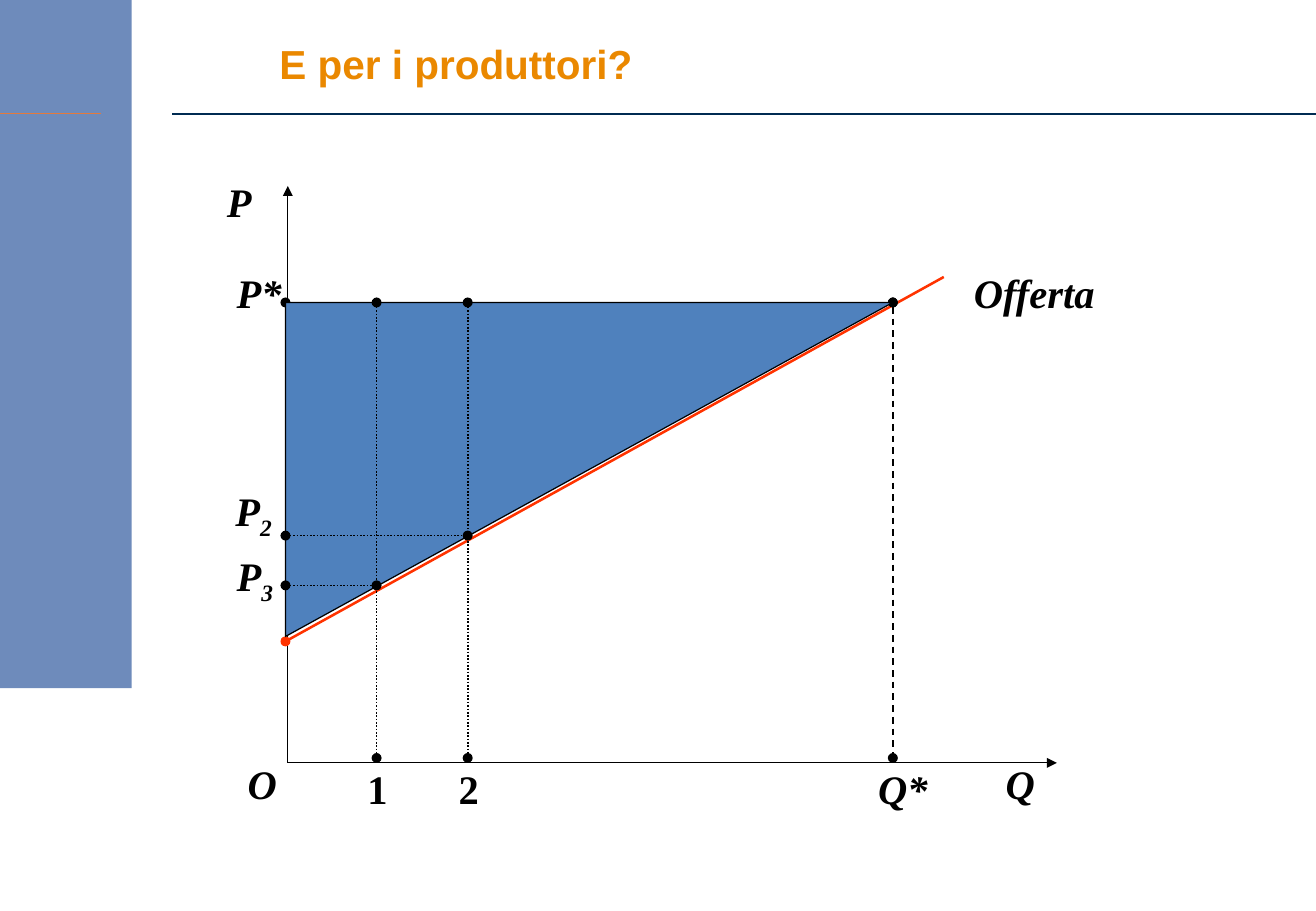
from dataclasses import dataclass

from lxml.etree import SubElement
from pptx import Presentation
from pptx.dml.color import RGBColor
from pptx.enum.dml import MSO_LINE as Dash
from pptx.enum.shapes import MSO_CONNECTOR as Connector, MSO_SHAPE as Shape
from pptx.enum.text import MSO_ANCHOR as Anchor, PP_ALIGN as Align
from pptx.oxml.ns import qn
from pptx.util import Pt


@dataclass(frozen=True)
class Theme:
    band: RGBColor = RGBColor.from_string("6E8BBB")
    accent: RGBColor = RGBColor.from_string("E37A3C")
    rule: RGBColor = RGBColor.from_string("002B52")
    title: RGBColor = RGBColor.from_string("EA8800")
    ink: RGBColor = RGBColor.from_string("000000")
    supply: RGBColor = RGBColor.from_string("FF3300")
    surplus: RGBColor = RGBColor.from_string("4F81BD")
    title_font: str = "Arial"
    label_font: str = "Times New Roman"
    text_size: Pt = Pt(24)
    thin: Pt = Pt(0.75)
    medium: Pt = Pt(1)
    thick: Pt = Pt(1.5)


THEME = Theme()

# Diagram coordinates in points
AXIS_X, AXIS_Y = 170.6, 452.2
PRICE_X, QUANTITY_Y = 169.2, 449.3
EQUILIBRIUM_X, EQUILIBRIUM_Y = 529.2, 179.3
SURPLUS_BOTTOM = 377.3
UNIT = 54


def add_line(slide, start, end, color=THEME.ink, width=THEME.medium,
             dash=None, head=None, tail=None):
    line = slide.shapes.add_connector(
        Connector.STRAIGHT, *(Pt(value) for value in (*start, *end)))
    line.line.color.rgb = color
    line.line.width = width
    if dash:
        line.line.dash_style = dash
    outline = line.line._get_or_add_ln()
    for tag, kind in (("a:headEnd", head), ("a:tailEnd", tail)):
        if kind:
            SubElement(outline, qn(tag), type=kind)
    SubElement(line._element.spPr, qn("a:effectLst"))


def add_label(slide, text, left, top, subscript="", italic=True, width=46):
    frame = slide.shapes.add_textbox(
        Pt(left), Pt(top), Pt(width), Pt(36)).text_frame
    frame.word_wrap = True
    paragraph = frame.paragraphs[0]
    paragraph.add_run().text = text
    if subscript:
        lowered = paragraph.add_run()
        lowered.text = subscript
        lowered._r.get_or_add_rPr().set("baseline", "-25000")
    font = paragraph.font
    font.name, font.size = THEME.label_font, THEME.text_size
    font.bold, font.italic = True, italic
    font.color.rgb = THEME.ink


def add_title(slide, text):
    title = slide.shapes.title
    title.left, title.top = Pt(158.4), Pt(12.2)
    title.width, title.height = Pt(443.5), Pt(50.4)
    title.text_frame.text = text
    title.text_frame.vertical_anchor = Anchor.MIDDLE
    paragraph = title.text_frame.paragraphs[0]
    paragraph.alignment = Align.LEFT
    font = paragraph.font
    font.name, font.size, font.bold = THEME.title_font, THEME.text_size, True
    font.color.rgb = THEME.title


def add_frame(slide):
    """Draw the side band and the rules under the title."""
    band = slide.shapes.add_shape(Shape.RECTANGLE, 0, 0, Pt(78), Pt(408))
    band.shadow.inherit = False
    band.fill.solid()
    band.fill.fore_color.rgb = THEME.band
    band.line.fill.background()
    add_line(slide, (0, 67.3), (60, 67.3), THEME.accent)
    add_line(slide, (102, 67.5), (780, 67.5), THEME.rule)


def add_axes(slide):
    for end in ((AXIS_X, 110.2), (626.4, AXIS_Y)):
        add_line(slide, (AXIS_X, AXIS_Y), end, width=THEME.thin, tail="triangle")
    add_label(slide, "P", 127.4, 101.5)
    add_label(slide, "O", 139.7, 446.4)
    add_label(slide, "Q", 589, 446.4)


def add_supply(slide):
    add_line(slide, (PRICE_X, 380.2), (559.4, 164.2), THEME.supply,
             THEME.thick, head="oval")
    add_label(slide, "Offerta", 570.2, 155.5, width=90)


def add_guides(slide, x, y, top, dash):
    """Join a point to the price axis, and drop a line to the quantity axis."""
    add_line(slide, (PRICE_X, y), (x, y), dash=dash, head="oval", tail="oval")
    add_line(slide, (x, top), (x, QUANTITY_Y), dash=dash, head="oval", tail="oval")


def add_surplus(slide):
    corner = (Pt(PRICE_X), Pt(EQUILIBRIUM_Y))
    builder = slide.shapes.build_freeform(*corner)
    builder.add_line_segments([
        (Pt(PRICE_X), Pt(SURPLUS_BOTTOM)),
        (Pt(EQUILIBRIUM_X), Pt(EQUILIBRIUM_Y)),
    ], close=True)
    surplus = builder.convert_to_shape()
    surplus.shadow.inherit = False
    surplus.fill.solid()
    surplus.fill.fore_color.rgb = THEME.surplus
    surplus.line.color.rgb = THEME.ink
    surplus.line.width = THEME.thin


def main():
    deck = Presentation()
    deck.slide_width, deck.slide_height = Pt(780), Pt(540)
    slide = deck.slides.add_slide(deck.slide_layouts[5])

    add_frame(slide)
    add_title(slide, "E per i produttori?")
    add_axes(slide)
    add_supply(slide)

    add_guides(slide, EQUILIBRIUM_X, EQUILIBRIUM_Y, EQUILIBRIUM_Y, Dash.DASH)
    add_label(slide, "P*", 133.2, 155.5)
    add_label(slide, "Q*", 513.4, 449.3)

    add_surplus(slide)
    for quantity, price, subscript, label_left, label_top in (
            (1, 347, "3", 133.2, 323.3), (2, 317.5, "2", 132.5, 284.4)):
        x = PRICE_X + quantity * UNIT
        add_guides(slide, x, price, EQUILIBRIUM_Y, Dash.ROUND_DOT)
        add_label(slide, str(quantity), x - 12.5, QUANTITY_Y, italic=False)
        add_label(slide, "P", label_left, label_top, subscript)

    deck.save("out.pptx")


if __name__ == "__main__":
    main()
